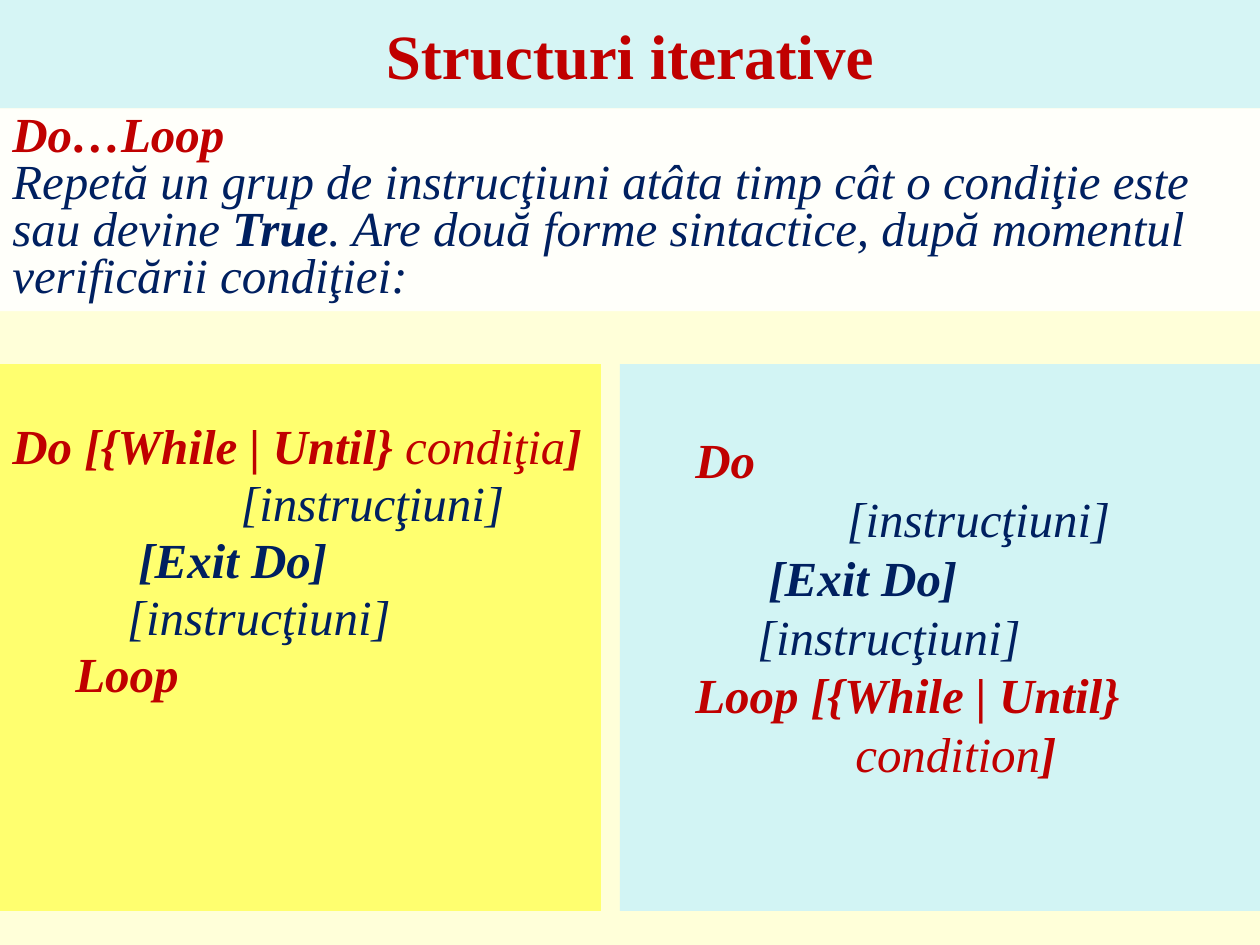
from pptx import Presentation
from pptx.dml.color import RGBColor
from pptx.enum.text import MSO_ANCHOR, MSO_AUTO_SIZE, PP_ALIGN
from pptx.util import Inches, Pt

RED, NAVY = "C00000", "002060"
WIDE, HIGH = Inches(10), Inches(7.5)


def hue(code):
    return RGBColor.from_string(code)


def write(box, area, fill, lines, size=28, italic=True, space=1.0,
          before=0, top=0.05, align=PP_ALIGN.LEFT, anchor=MSO_ANCHOR.TOP):
    """Place box by percent of the slide; lines hold (indent, runs of text, colour, bold)."""
    left, up, width, height = area
    box.left, box.width = int(WIDE * left / 100), int(WIDE * width / 100)
    box.top, box.height = int(HIGH * up / 100), int(HIGH * height / 100)
    box.fill.solid()
    box.fill.fore_color.rgb = hue(fill)
    frame = box.text_frame
    frame.word_wrap = True
    frame.auto_size = MSO_AUTO_SIZE.NONE
    frame.vertical_anchor = anchor
    frame.margin_top = Inches(top)
    side = frame.margin_left
    for row, (indent, runs) in enumerate(lines):
        para = frame.add_paragraph() if row else frame.paragraphs[0]
        para.alignment = align
        para.line_spacing = space
        para.space_before = Pt(before)
        para._p.get_or_add_pPr().set("marL", str(Inches(indent)))
        for text, color, bold in runs:
            run = para.add_run()
            run.text = text
            font = run.font
            font.name, font.size = "Times New Roman", Pt(size)
            font.bold, font.italic = bold, italic
            font.color.rgb = hue(color)


deck = Presentation()
deck.slide_width, deck.slide_height = WIDE, HIGH
slide = deck.slides.add_slide(deck.slide_layouts[5])
slide.background.fill.solid()
slide.background.fill.fore_color.rgb = hue("FFFFD9")

write(slide.shapes.title, (0, 0, 100, 11.47), "D6F5F5",
      [(0, [("Structuri iterative", RED, True)])], size=36, italic=False,
      align=PP_ALIGN.CENTER, anchor=MSO_ANCHOR.MIDDLE)

intro = [
    (0, [("Do…Loop", RED, True)]),
    (0, [("Repetă un grup de instrucţiuni atâta timp cât o condiţie este sau devine ", NAVY, False),
         ("True", NAVY, True),
         (". Are două forme sintactice, după momentul verificării condiţiei:", NAVY, False)]),
]
step = [("[instrucţiuni]", NAVY, False)]
leave = [("[Exit Do]", NAVY, True)]
first = [
    (0, [("Do [{While | Until} ", RED, True), ("condiţia", RED, False), ("]", RED, True)]),
    (1.81, step),
    (1, leave),
    (0.91, step),
    (0.5, [("Loop", RED, True)]),
]
last = [
    (0.5, [("Do", RED, True)]),
    (1.7, step),
    (1.08, leave),
    (0.99, step),
    (0.5, [("Loop [{While | Until}", RED, True)]),
    (1.77, [("condition", RED, False), ("]", RED, True)]),
]
panels = [
    ((0, 11.47, 100, 21.47), "FFFFFA", intro, {"space": 0.8}),
    ((0, 38.53, 47.7, 57.87), "FFFF6F", first, {"space": 0.8, "before": 5.6, "top": 0.5}),
    ((49.2, 38.53, 50.8, 57.87), "D2F4F4", last, {"top": 0.52}),
]
for area, fill, lines, form in panels:
    write(slide.shapes.add_textbox(0, 0, 0, 0), area, fill, lines, **form)

deck.save("out.pptx")
